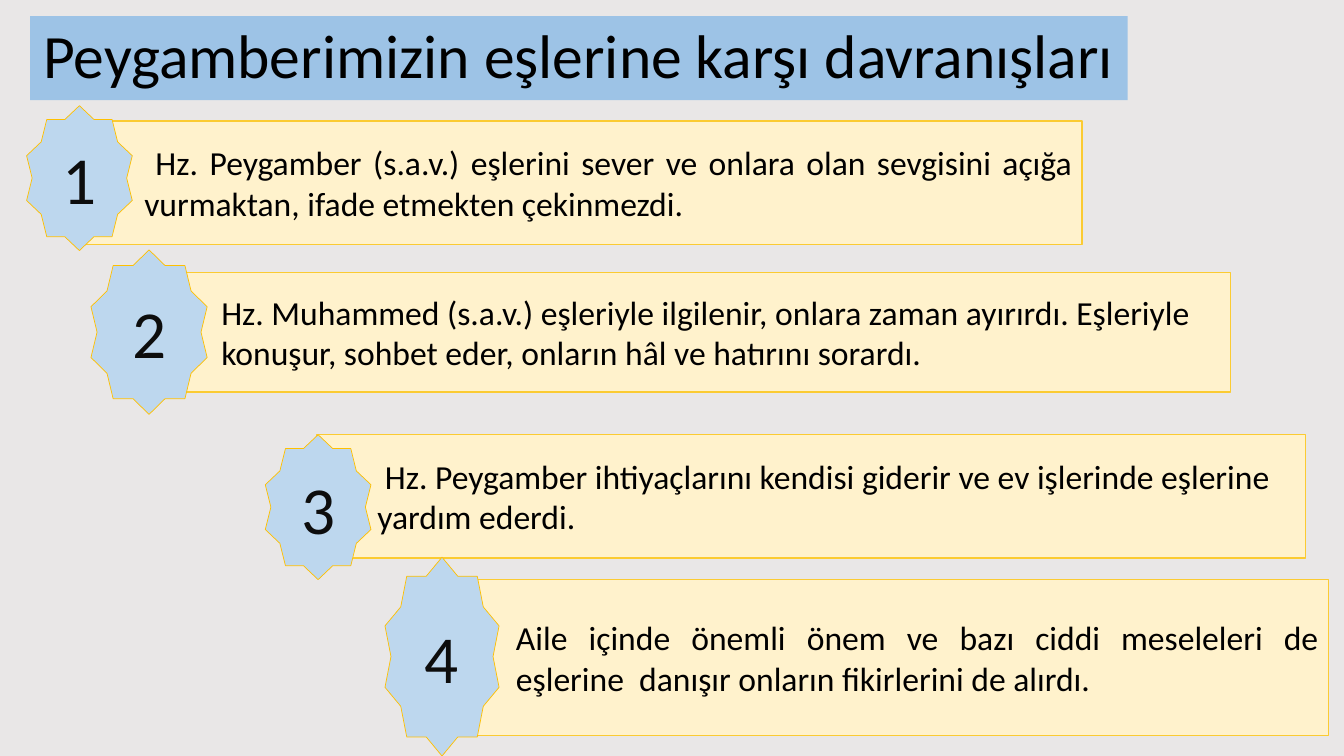
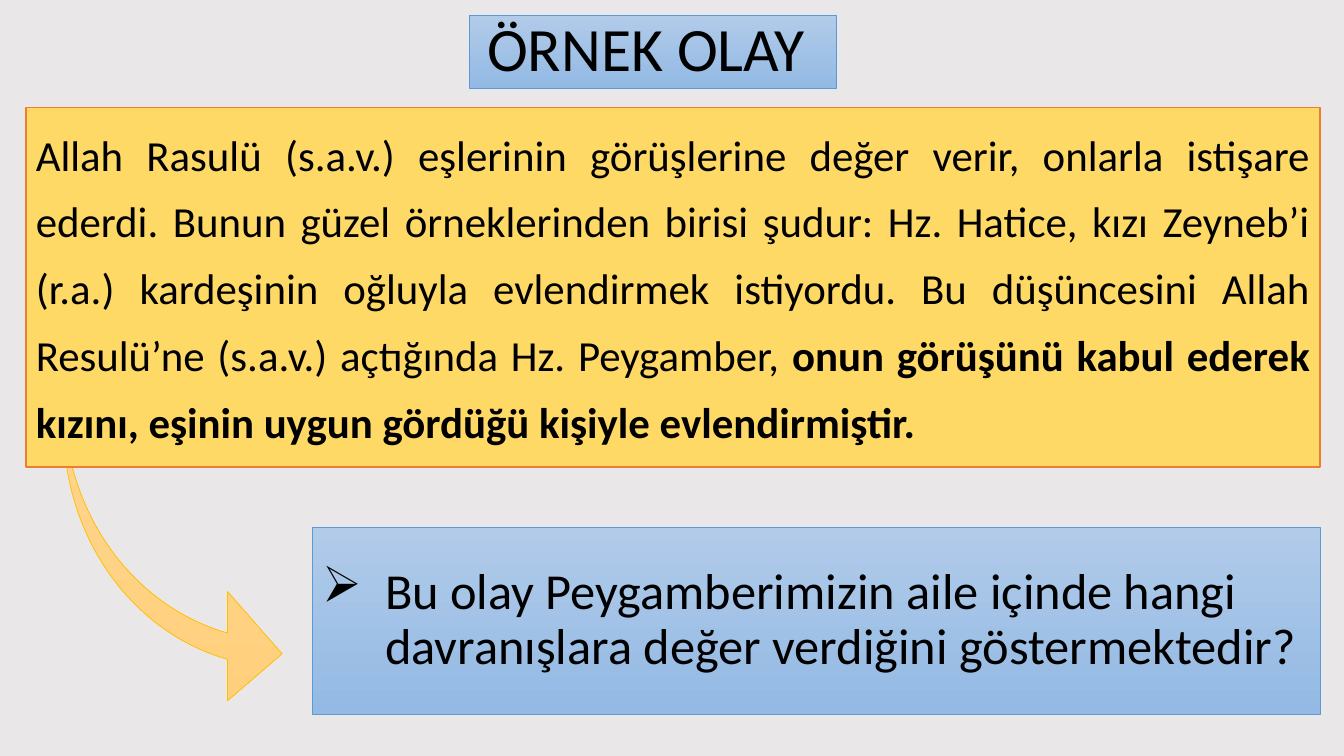
"""Build two slides on how the Prophet treated his wives, with an example case."""
from lxml import etree
from pptx import Presentation
from pptx.dml.color import RGBColor
from pptx.enum.shapes import MSO_SHAPE
from pptx.enum.text import MSO_ANCHOR, MSO_AUTO_SIZE, PP_ALIGN
from pptx.oxml.ns import qn
from pptx.util import Pt

RECTANGLE = MSO_SHAPE.RECTANGLE
STAR = MSO_SHAPE.STAR_10_POINT
CURVED_ARROW = MSO_SHAPE.CURVED_RIGHT_ARROW
LEFT, CENTER, JUSTIFY = PP_ALIGN.LEFT, PP_ALIGN.CENTER, PP_ALIGN.JUSTIFY
TOP, MIDDLE = MSO_ANCHOR.TOP, MSO_ANCHOR.MIDDLE

FONT = "Calibri"
BLACK, NUMBER_INK = "000000", "0D0D0D"
BACKGROUND = "E9E7E7"
TITLE_BLUE, STAR_BLUE = "9DC3E6", "BDD7EE"
CREAM, CREAM_EDGE = "FFF2CC", "FBCB32"
GOLD, GOLD_EDGE, ORANGE = "FFD966", "FFC000", "ED7D31"
BLUE_FADE, BLUE_EDGE = ("B1CBE9", "93B9E4"), "5B9BD5"
AMBER_FADE = ("FFDB9E", "FFD07C")


def paint(shape, box, fill, edge=None, weight=0.5):
    """Place a shape and give it a solid or two-colour fill and an outline."""
    shape.left, shape.top, shape.width, shape.height = map(Pt, box)
    shape.shadow.inherit = False
    if isinstance(fill, tuple):
        shape.fill.gradient()
        shape.fill.gradient_angle = 270
        for stop, colour in zip(shape.fill.gradient_stops, fill):
            stop.color.rgb = RGBColor.from_string(colour)
    else:
        shape.fill.solid()
        shape.fill.fore_color.rgb = RGBColor.from_string(fill)
    if edge:
        shape.line.color.rgb = RGBColor.from_string(edge)
        shape.line.width = Pt(weight)
    else:
        shape.line.fill.background()


def write(shape, text, size, bold_end="", color=BLACK, align=CENTER, anchor=MIDDLE,
          spacing=1.0, margin=0, first=0, bullet=None, wrap=True):
    """Write one paragraph, optionally closing with a bold run."""
    frame = shape.text_frame
    frame.auto_size = MSO_AUTO_SIZE.NONE
    frame.word_wrap = wrap
    frame.vertical_anchor = anchor
    paragraph = frame.paragraphs[0]
    paragraph.alignment = align
    paragraph.line_spacing = spacing
    properties = paragraph._p.get_or_add_pPr()
    properties.set("marL", str(Pt(margin)))
    properties.set("indent", str(Pt(first)))
    if bullet:
        etree.SubElement(properties, qn("a:buChar")).set("char", bullet)
    for words, bold in ((text, False), (bold_end, True)):
        if words:
            run = paragraph.add_run()
            run.text = words
            run.font.name = FONT
            run.font.size = Pt(size)
            run.font.bold = bold
            run.font.color.rgb = RGBColor.from_string(color)


prs = Presentation()
prs.slide_width, prs.slide_height = Pt(960), Pt(540)
prs.slide_master.background.fill.solid()
prs.slide_master.background.fill.fore_color.rgb = RGBColor.from_string(BACKGROUND)
title_only = prs.slide_layouts[5]

titles = [
    ("Peygamberimizin eşlerine karşı davranışları", (21.5, 11.5, 784, 60), TITLE_BLUE, None),
    ("ÖRNEK OLAY", (335.5, 11, 262, 52), BLUE_FADE, BLUE_EDGE),
]
slides = []
for heading, box, fill, edge in titles:
    slide = prs.slides.add_slide(title_only)
    paint(slide.shapes.title, box, fill, edge)
    write(slide.shapes.title, heading, 44, spacing=0.9, wrap=False)
    slides.append(slide)
behaviours, example = slides
example.shapes.title.text_frame.margin_right = Pt(17)

steps = [
    ("Hz. Peygamber (s.a.v.) eşlerini sever ve onlara olan sevgisini açığa vurmaktan, "
     "ifade etmekten çekinmezdi.",
     (56, 86.5, 717, 88), (19, 75.5, 75.5, 103.5), JUSTIFY, 40, 8),
    ("Hz. Muhammed (s.a.v.) eşleriyle ilgilenir, onlara zaman ayırırdı. Eşleriyle konuşur, "
     "sohbet eder, onların hâl ve hatırını sorardı.",
     (115, 194.5, 764, 85.5), (65, 178.5, 83, 117.5), LEFT, 36, 0),
    ("Hz. Peygamber ihtiyaçlarını kendisi giderir ve ev işlerinde eşlerine yardım ederdi.",
     (226.5, 310.5, 706, 88), (189.5, 310.5, 75.5, 103.5), LEFT, 36, 5.4),
    ("Aile içinde önemli önem ve bazı ciddi meseleleri de eşlerine  danışır onların "
     "fikirlerini de alırdı.",
     (325.5, 414, 623.5, 111.5), (275, 398, 81.5, 142), JUSTIFY, 36, 0),
]
for number, (text, panel_box, star_box, align, margin, first) in enumerate(steps, 1):
    panel = behaviours.shapes.add_shape(RECTANGLE, 0, 0, 0, 0)
    paint(panel, panel_box, CREAM, CREAM_EDGE, 1)
    write(panel, text, 24, align=align, margin=margin, first=first)
    star = behaviours.shapes.add_shape(STAR, 0, 0, 0, 0)
    paint(star, star_box, STAR_BLUE, GOLD_EDGE)
    write(star, str(number), 48, color=NUMBER_INK, wrap=False)

question = example.shapes.add_shape(RECTANGLE, 0, 0, 0, 0)
paint(question, (223, 376.5, 720, 134), BLUE_FADE, BLUE_EDGE)
write(question, "Bu olay Peygamberimizin aile içinde hangi davranışlara değer verdiğini göstermektedir?",
      36, align=LEFT, spacing=0.9, margin=45, first=-45, bullet="➢")

arrow = example.shapes.add_shape(CURVED_ARROW, 0, 0, 0, 0)
paint(arrow, (45.5, 114.5, 156, 391.5), AMBER_FADE, GOLD_EDGE)
for index, value in enumerate((0.12, 0.5, 0.25)):
    arrow.adjustments[index] = value

story = example.shapes.add_shape(RECTANGLE, 0, 0, 0, 0)
paint(story, (18.5, 77, 924.5, 256.5), GOLD, ORANGE, 1)
write(story,
      "Allah Rasulü (s.a.v.) eşlerinin görüşlerine değer verir, onlarla istişare ederdi. "
      "Bunun güzel örneklerinden birisi şudur: Hz. Hatice, kızı Zeyneb’i (r.a.) kardeşinin "
      "oğluyla evlendirmek istiyordu. Bu düşüncesini Allah Resulü’ne (s.a.v.) açtığında "
      "Hz. Peygamber, ",
      30.6, align=JUSTIFY, anchor=TOP, spacing=1.3,
      bold_end="onun görüşünü kabul ederek kızını, eşinin uygun gördüğü kişiyle evlendirmiştir.")

prs.save("out.pptx")
